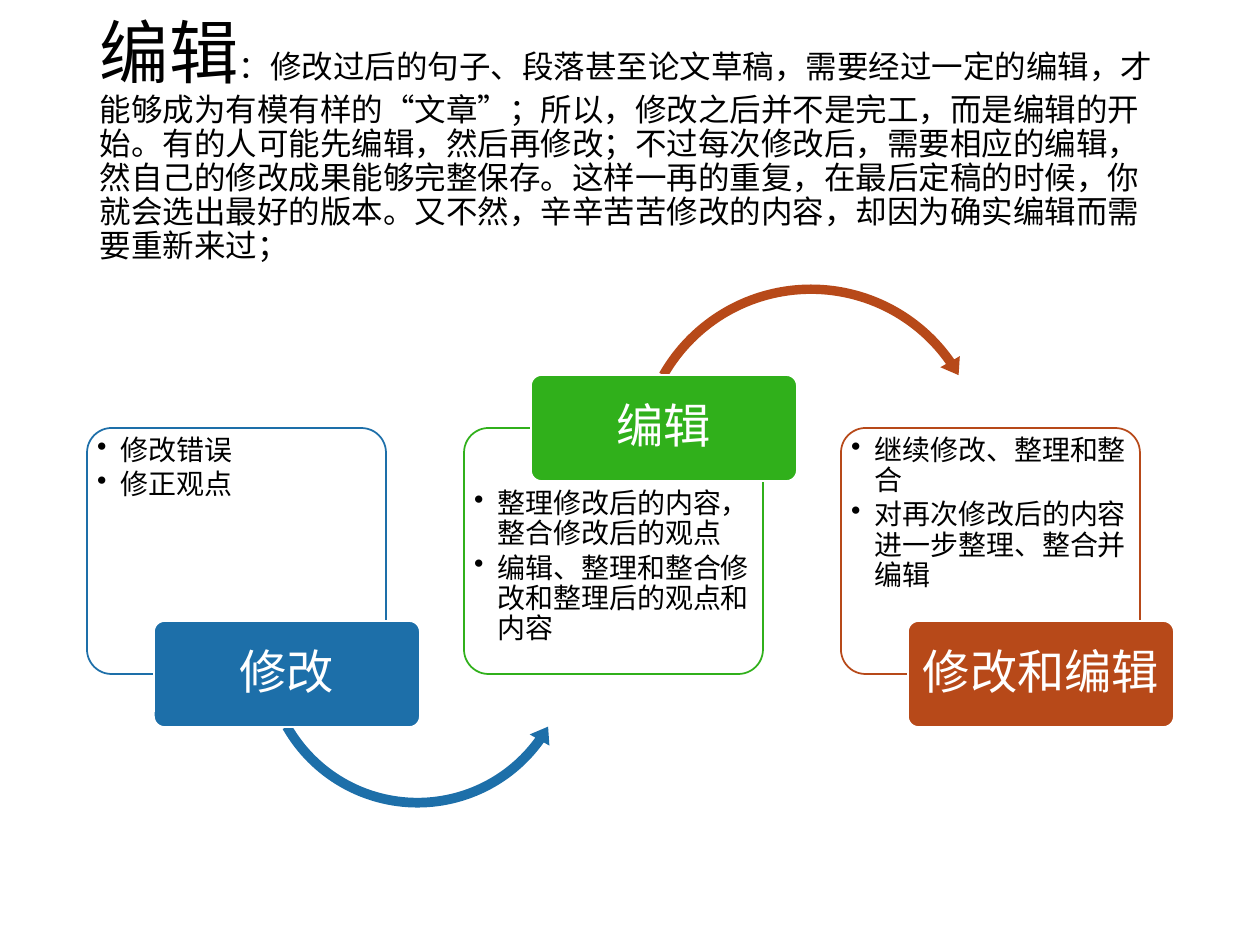
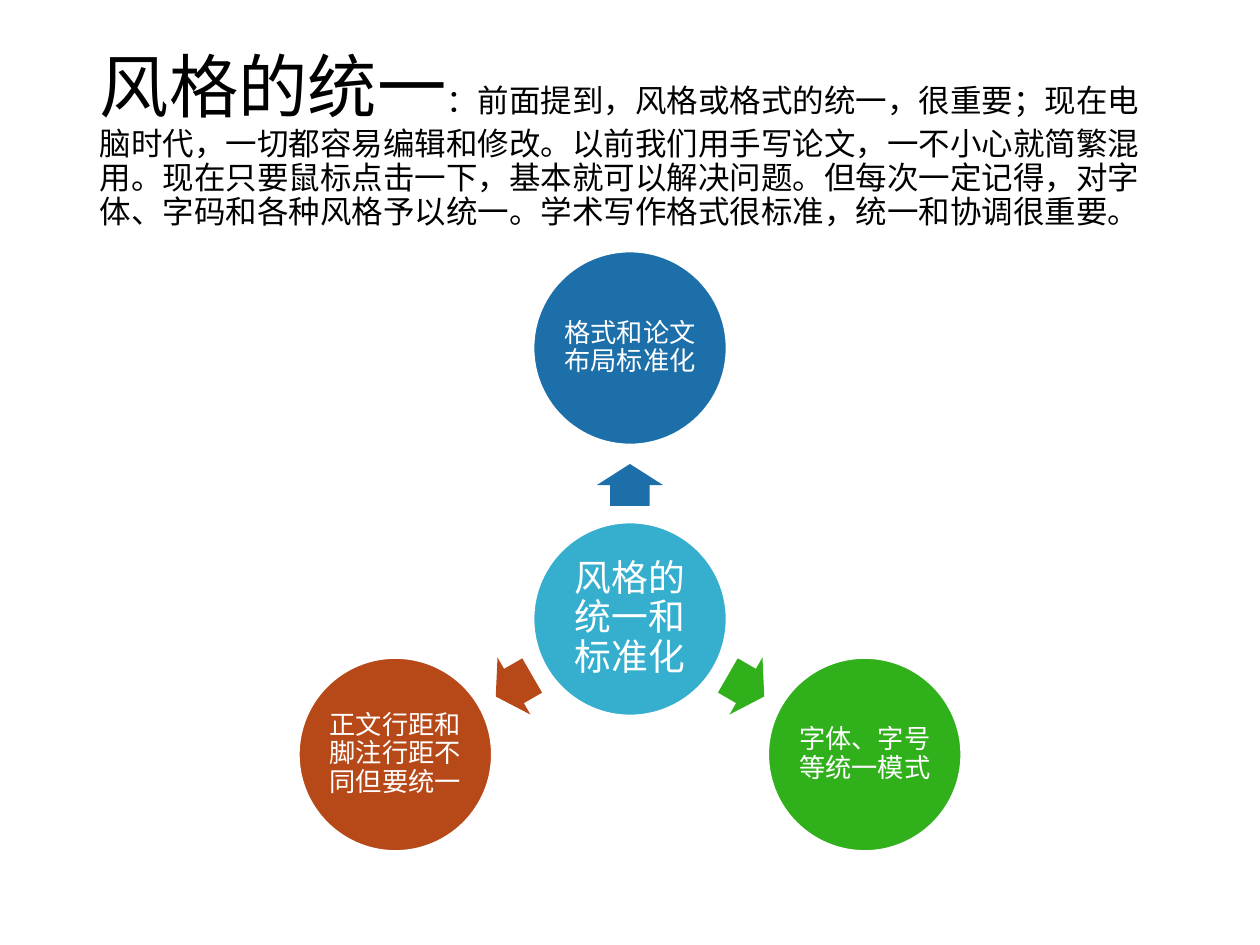
import math
from lxml import etree
from pptx import Presentation
from pptx import util as u
from pptx.dml.color import RGBColor
from pptx.enum import shapes, text
from pptx.oxml.ns import qn

PX = 914400 / 126
FONT = "Times New Roman"
BLACK, WHITE = "000000", "FFFFFF"
BLUE, GREEN, RUST, CYAN = "1D6FA9", "30B01B", "B74919", "36AFCE"
rgb = RGBColor.from_string
preset = shapes.MSO_SHAPE


def add_block(slide, kind, box, fill, line=None, adjustments=()):
    block = slide.shapes.add_shape(kind, *(round(n * PX) for n in box))
    block.shadow.inherit = False
    for i, value in enumerate(adjustments):
        block.adjustments[i] = value
    block.fill.solid()
    block.fill.fore_color.rgb = rgb(fill)
    if line:
        block.line.color.rgb = rgb(line)
        block.line.width = u.Pt(1)
    else:
        block.line.fill.background()
    return block


def write(block, lines, size, color, margins, anchor=text.MSO_ANCHOR.MIDDLE,
          align=text.PP_ALIGN.CENTER):
    frame = block.text_frame
    frame.word_wrap = True
    frame.vertical_anchor = anchor
    frame.margin_left = frame.margin_right = round(margins[0] * PX)
    frame.margin_top, frame.margin_bottom = (round(m * PX) for m in margins[1:])
    for i, line in enumerate(lines):
        paragraph = frame.add_paragraph() if i else frame.paragraphs[0]
        paragraph.text = line
        paragraph.alignment = align
        paragraph.line_spacing = 0.9
        paragraph.font.name = FONT
        paragraph.font.size = u.Pt(size)
        paragraph.font.color.rgb = rgb(color)
    return frame.paragraphs


deck = Presentation()
deck.slide_width, deck.slide_height = u.Inches(10), u.Inches(7.5)

# Title: a large keyword followed by its explanation
titles = [
    ("编辑", "：修改过后的句子、段落甚至论文草稿，需要经过一定的编辑，才能够成为有模有样的“文章”；"
     "所以，修改之后并不是完工，而是编辑的开始。有的人可能先编辑，然后再修改；"
     "不过每次修改后，需要相应的编辑，然自己的修改成果能够完整保存。"
     "这样一再的重复，在最后定稿的时候，你就会选出最好的版本。"
     "又不然，辛辛苦苦修改的内容，却因为确实编辑而需要重新来过；"),
    ("风格的统一", "：前面提到，风格或格式的统一，很重要；现在电脑时代，一切都容易编辑和修改。"
     "以前我们用手写论文，一不小心就简繁混用。现在只要鼠标点击一下，基本就可以解决问题。"
     "但每次一定记得，对字体、字码和各种风格予以统一。学术写作格式很标准，统一和协调很重要。"),
]
slides = []
for keyword, explanation in titles:
    slide = deck.slides.add_slide(deck.slide_layouts[6])
    title = slide.shapes.add_textbox(*(round(n * PX) for n in (87, 50, 1086, 183)))
    heading = write(title, [keyword], 18, BLACK, (13, 6, 6), align=text.PP_ALIGN.LEFT)[0]
    heading.runs[0].font.size = u.Pt(39.6)
    heading.add_run().text = explanation
    for run in heading.runs:
        run.font.name = FONT
        run.font.color.rgb = rgb(BLACK)
    heading.runs[1].font.size = u.Pt(18)
    slides.append(slide)
editing, style = slides

# Slide 1: three stages, the middle label sits on top of its panel
stages = [
    ("修改", BLUE, ["修改错误", "修正观点"], 621, 1,
     (preset.LEFT_CIRCULAR_ARROW, (256, 491, 323, 323), (0.03, 3.628, 21.383, 90.245, 0.035))),
    ("编辑", GREEN, ["整理修改后的内容，整合修改后的观点", "编辑、整理和整合修改和整理后的观点和内容"], 375, 54,
     (preset.CIRCULAR_ARROW, (630, 278, 362, 362), (0.026, 3.221, 195.024, 125.755, 0.031))),
    ("修改和编辑", RUST, ["继续修改、整理和整合", "对再次修改后的内容进一步整理、整合并编辑"], 621, 1, None),
]
arrow_colors = [BLUE, RUST]
for i, (name, color, points, label_top, text_top, arrow) in enumerate(stages):
    left = 87 + 377 * i
    panel = add_block(editing, preset.ROUNDED_RECTANGLE, (left, 428, 299, 246),
                      WHITE, color, [0.1])
    panel_fill = panel._element.spPr.find(qn("a:solidFill"))
    etree.SubElement(panel_fill[0], qn("a:alpha"), val="90000")
    for point in write(panel, points, 16, BLACK, (3, text_top, 3),
                       text.MSO_ANCHOR.TOP, text.PP_ALIGN.LEFT):
        point.space_after = u.Pt(2.4)
        bullet = point._p.get_or_add_pPr()
        bullet.set("marL", "171450")
        bullet.set("indent", "-171450")
        mark = etree.Element(qn("a:buChar"), char="•")
        bullet.find(qn("a:spcAft")).addnext(mark)
    if arrow:
        kind, box, adjustments = arrow
        add_block(editing, kind, box, arrow_colors[i], adjustments=adjustments)
    label = add_block(editing, preset.ROUNDED_RECTANGLE, (left + 67, label_top, 266, 106),
                      color, WHITE, [0.1])
    write(label, [name], 27, WHITE, (7, 5, 5))

# Slide 2: a hub with three circles around it
hub_x, hub_y, size = 630, 619, 193
hub = add_block(style, preset.OVAL, (hub_x - size / 2, hub_y - size / 2, size, size), CYAN, WHITE)
write(hub, ["风格的统一和标准化"], 21, WHITE, (4, 4, 4))
aspects = [
    ("格式和论文布局标准化", BLUE, 270),
    ("字体、字号等统一模式", GREEN, 30),
    ("正文行距和脚注行距不同但要统一", RUST, 150),
]
for name, color, angle in aspects:
    dx, dy = math.cos(math.radians(angle)), math.sin(math.radians(angle))
    pointer = add_block(style, preset.RIGHT_ARROW,
                        (hub_x + 134 * dx - 21, hub_y + 134 * dy - 33, 42, 66),
                        color, adjustments=[0.6, 0.5])
    pointer.rotation = angle
    circle = add_block(style, preset.OVAL,
                       (hub_x + 271 * dx - size / 2, hub_y + 271 * dy - size / 2, size, size),
                       color, WHITE)
    write(circle, [name], 15, WHITE, (1, 2, 2))

deck.save("out.pptx")
